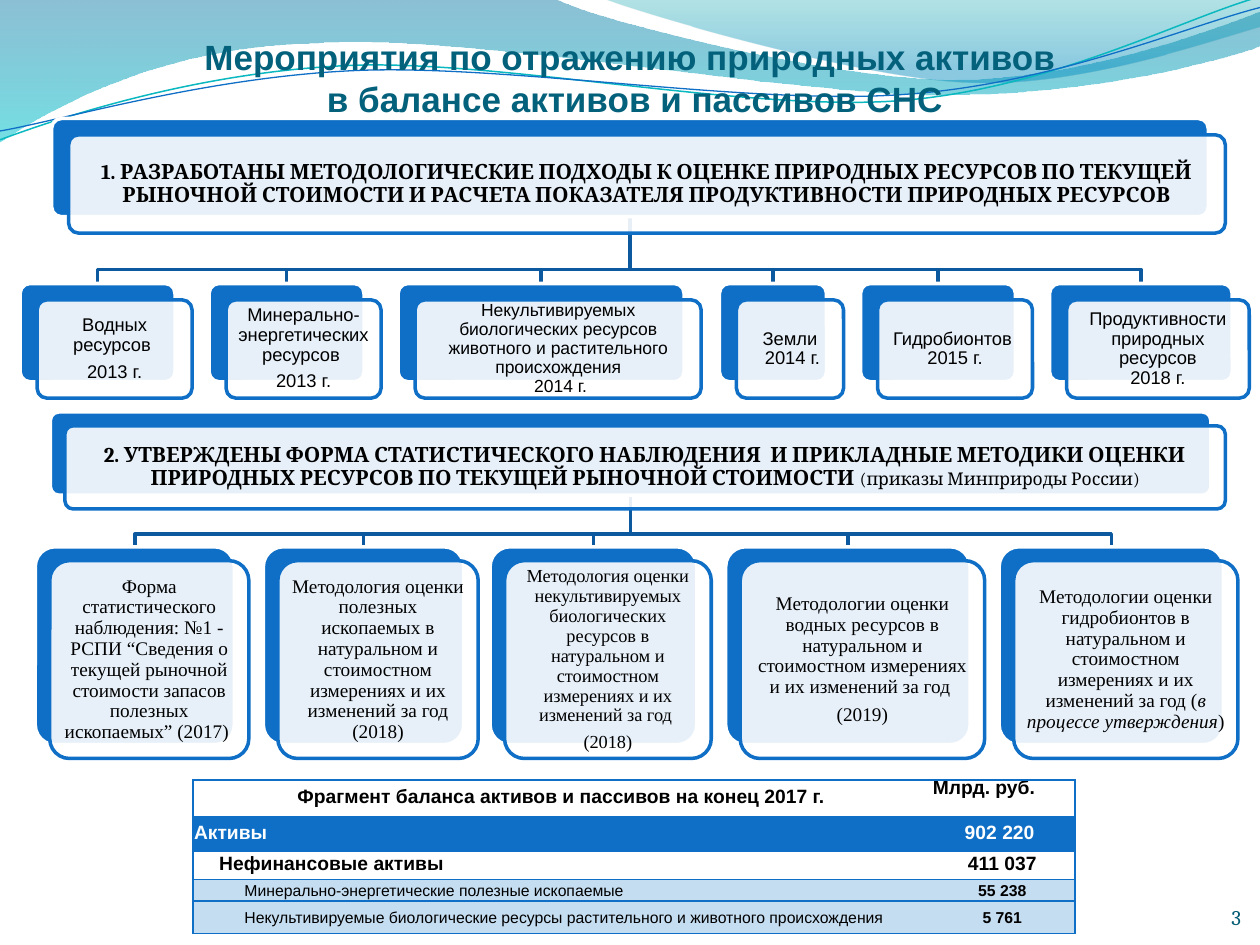
from copy import deepcopy
from math import cos, radians, sin

from lxml.etree import Element, SubElement
from pptx import Presentation
from pptx.dml.color import RGBColor
from pptx.enum.shapes import MSO_SHAPE as Shape
from pptx.enum.text import MSO_ANCHOR as Anchor, PP_ALIGN as Align
from pptx.oxml.ns import qn
from pptx.util import Inches, Pt

THEME = {
    "blue": "0F6FC6", "branch": "0C599F", "pale": "C5DDF1", "white": "FFFFFF", "black": "000000",
    "title": "04617B", "number": "045D75", "teal": "0AB8BF",
    "sans": "Arial", "serif": "Cambria", "roman": "Times New Roman",
    "title_size": 20, "heading_size": 12, "table_size": 11, "detail_size": 9,
}
NO_TABLE_STYLE = "{2D5ABB26-0587-4C30-8999-92F81FD0307C}"
CORNER = 0.1
WAVE_TILT = 357.3

TITLE = "Мероприятия по отражению природных активов \nв балансе активов и пассивов СНС"
PAGE_NUMBER = "3"

# Each curve: start point, then cubic segments (three points) or straight ones (one point).
BANDS = [
    {"start": (0, 0),
     "segments": [[(4.4, -0.01)], [(4.76, 0.17), (6.64, 0.63), (7.58, 0.63)],
                  [(8.53, 0.63), (9.58, 0.26), (10, 0.09)], [(10.01, 0.36)],
                  [(9.83, 0.44), (8.7, 0.76), (7.46, 0.75)], [(6.22, 0.75), (3.82, 0.28), (2.57, 0.34)],
                  [(1.29, 0.36), (0.46, 0.83), (-0.01, 1.13)]],
     "stops": [(0, "0074A1", 45), (1, "00C6CF", 55)]},
    {"start": (4.79, -0.01),
     "segments": [[(5.09, 0.11), (6.82, 0.62), (7.69, 0.65)], [(8.56, 0.69), (9.61, 0.32), (10, 0.21)],
                  [(10, 0)]],
     "stops": [(0, "00A1A9", 30), (0.8, "008BBF", 45)]},
]
WAVES = [
    {"start": (0, 1.11), "color": "teal", "width": 0.85, "center": (4.99, 0.57),
     "segments": [[(0.48, 0.93), (1.58, 0.57), (2.77, 0.52)], [(3.95, 0.47), (5.93, 0.89), (7.13, 0.8)],
                  [(8.33, 0.71), (9.38, 0.15), (9.98, -0.02)]]},
    {"start": (0, 1.04), "color": "blue", "width": 0.75, "center": (5, 0.59),
     "segments": [[(0.47, 0.96), (1.64, 0.61), (2.83, 0.56)], [(4.03, 0.51), (5.97, 0.84), (7.17, 0.75)],
                  [(8.36, 0.67), (9.41, 0.21), (10, 0.06)]]},
]

# Paragraphs are lists of (text, format overrides) runs.
METHODS = {
    "head": (0.41, 0.94, 9.18, 0.78), "gap": 0.27, "rise": 0.13, "drop": 0.11,
    "top": 2.25, "height": 0.78, "font": THEME["sans"],
    "heading": [[("1. РАЗРАБОТАНЫ МЕТОДОЛОГИЧЕСКИЕ ПОДХОДЫ К ОЦЕНКЕ ПРИРОДНЫХ РЕСУРСОВ ПО ТЕКУЩЕЙ "
                  "РЫНОЧНОЙ СТОИМОСТИ И РАСЧЕТА ПОКАЗАТЕЛЯ ПРОДУКТИВНОСТИ ПРИРОДНЫХ РЕСУРСОВ", {})]],
    "items": [  # left, width, type size, paragraphs
        (0.16, 1.23, 10.5, [[("Водных ресурсов ", {})], [("2013 г.", {})]]),
        (1.66, 1.23, 10.5, [[("Минерально-энергетических ресурсов ", {})], [("2013 г.", {})]]),
        (3.16, 2.27, 10, [[("Некультивируемых биологических ресурсов животного и растительного "
                            "происхождения\n 2014 г.", {})]]),
        (5.71, 0.85, 10.5, [[("Земли\n 2014 г.", {})]]),
        (6.83, 1.23, 10.5, [[("Гидробионтов \n2015 г.", {})]]),
        (8.33, 1.45, 10.5, [[("Продуктивности природных ресурсов\n2018 г.", {})]]),
    ],
}
APPROVED = {
    "head": (0.4, 3.27, 9.21, 0.66), "gap": 0.23, "rise": 0.11, "drop": 0.1,
    "top": 4.34, "height": 1.57, "font": THEME["roman"],
    "heading": [[("2. УТВЕРЖДЕНЫ ФОРМА СТАТИСТИЧЕСКОГО НАБЛЮДЕНИЯ  И ПРИКЛАДНЫЕ МЕТОДИКИ ОЦЕНКИ "
                  "ПРИРОДНЫХ РЕСУРСОВ ПО ТЕКУЩЕЙ РЫНОЧНОЙ СТОИМОСТИ ", {}),
                 ("(приказы Минприроды России)", {"size": Pt(10), "bold": False})]],
    "items": [
        (0.28, 1.58, 11, [[("Форма статистического наблюдения: №1 - РСПИ “Сведения о текущей рыночной "
                            "стоимости запасов полезных ископаемых” (2017) ", {})]]),
        (2.09, 1.59, 11, [[("Методология оценки полезных ископаемых в натуральном и стоимостном "
                            "измерениях и их изменений за год (2018)", {})]]),
        (3.89, 1.64, 10.5, [[("Методология оценки некультивируемых биологических ресурсов в натуральном "
                              "и стоимостном измерениях и их изменений за год ", {})], [("(2018)", {})]]),
        (5.76, 1.94, 11, [[("Методологии оценки водных ресурсов в натуральном и стоимостном измерениях "
                            "и их изменений за год ", {})], [("(2019)", {})]]),
        (7.93, 1.78, 11, [[("Методологии оценки гидробионтов в натуральном и стоимостном измерениях и "
                            "их изменений за год (", {}), ("в процессе утверждения", {"italic": True}),
                           (")", {})]]),
    ],
}

BALANCE_PLACE = (1.53, 6.19, 7, 1.23)
BALANCE_COLUMNS = (5.85, 1.15)
BALANCE = [  # label, value, row height, indent, fill, text colour, type size, bold label
    ("Фрагмент баланса активов и пассивов на конец 2017 г.", "Млрд. руб.", 0.29, 0, "white", "black", "table_size", True),
    ("Активы", "902 220 ", 0.28, 0, "blue", "white", "table_size", True),
    ("Нефинансовые активы", "411 037", 0.22, 0.2, "white", "black", "table_size", True),
    ("Минерально-энергетические полезные ископаемые", "55 238", 0.17, 0.4, "pale", "black", "detail_size", False),
    ("Некультивируемые биологические ресурсы растительного и животного происхождения", "5 761",
     0.26, 0.4, "pale", "black", "detail_size", False),
]


def rgb(name):
    return RGBColor.from_string(THEME.get(name, name))


def font_format(font, size, color="black", bold=False):
    return {"name": font, "size": Pt(size), "bold": bold, "color": color}


def set_alpha(color_element, percent):
    SubElement(color_element, qn("a:alpha")).set("val", str(percent * 1000))


def write(frame, paragraphs, base, align=Align.CENTER, anchor=Anchor.MIDDLE, margins=(0, 0, 0, 0), **spacing):
    """Fill a text frame; a newline inside a run becomes a line break of the same size."""
    frame.word_wrap, frame.vertical_anchor = True, anchor
    for side, margin in zip(("left", "top", "right", "bottom"), margins):
        setattr(frame, f"margin_{side}", Inches(margin))
    for index, runs in enumerate(paragraphs):
        para = frame.add_paragraph() if index else frame.paragraphs[0]
        para.alignment = align
        for name, value in spacing.items():
            setattr(para, name, value)
        for text, changes in runs:
            for number, line in enumerate(text.split("\n")):
                if number:
                    para.add_line_break()
                    para._p[-1].append(deepcopy(span._r.rPr))
                span = para.add_run()
                span.text = line
                for name, value in {**base, **changes}.items():
                    if name == "color":
                        span.font.color.rgb = rgb(value)
                    else:
                        setattr(span.font, name, value)


def add_text(page, place, paragraphs, base, **layout):
    box = page.shapes.add_textbox(*map(Inches, place))
    write(box.text_frame, paragraphs, base, **layout)


def add_path(page, start, segments, close=False):
    """Draw a freeform; segments of three points become cubic curves."""
    knots = [(Inches(x), Inches(y)) for x, y in [start] + [segment[-1] for segment in segments]]
    builder = page.shapes.build_freeform(*knots[0])
    builder.add_line_segments(knots[1:], close=close)
    shape = builder.convert_to_shape()
    shape.shadow.inherit = False
    for step, segment in zip(list(shape.element.iter(qn("a:lnTo"))), segments):
        if len(segment) == 3:
            curve = Element(qn("a:cubicBezTo"))
            for x, y in segment:
                SubElement(curve, qn("a:pt"), x=str(Inches(x) - shape.left), y=str(Inches(y) - shape.top))
            step.getparent().replace(step, curve)
    return shape


def add_line(page, start, segments, color, width):
    line = add_path(page, start, segments)
    line.fill.background()
    line.line.color.rgb, line.line.width = rgb(color), Pt(width)
    return line


def add_wave(page, wave):
    """Lay the curve level around its center, then tilt the whole shape."""
    angle = radians(360 - WAVE_TILT)
    middle_x, middle_y = wave["center"]

    def level(point):
        x, y = point[0] - middle_x, point[1] - middle_y
        return middle_x + x * cos(angle) - y * sin(angle), middle_y + x * sin(angle) + y * cos(angle)

    segments = [[level(point) for point in segment] for segment in wave["segments"]]
    add_line(page, level(wave["start"]), segments, wave["color"], wave["width"]).rotation = WAVE_TILT


def add_band(page, band):
    shape = add_path(page, band["start"], band["segments"], close=True)
    shape.line.fill.background()
    shape.fill.gradient()
    shape.fill.gradient_angle = 270
    for stop, (position, color, _) in zip(shape.fill.gradient_stops, band["stops"]):
        stop.position, stop.color.rgb = position, rgb(color)
    colors = list(shape.element.spPr.find(qn("a:gradFill")).iter(qn("a:srgbClr")))
    for element, (_, _, alpha) in zip(colors, band["stops"]):
        set_alpha(element, alpha)


def add_card(page, place, shift, paragraphs, base):
    """Add a blue plate, a translucent white card in front of it, and the text."""
    left, top, width, height = place
    front = left + shift[0], top + shift[1]
    for x, y, fill, line in ((left, top, "blue", "white"), (*front, "white", "blue")):
        card = page.shapes.add_shape(Shape.ROUNDED_RECTANGLE, *map(Inches, (x, y, width, height)))
        card.adjustments[0] = CORNER
        card.shadow.inherit = False
        card.fill.solid()
        card.fill.fore_color.rgb = rgb(fill)
        card.line.color.rgb, card.line.width = rgb(line), Pt(2)
    set_alpha(card.element.spPr.find(qn("a:solidFill"))[0], 90)
    inset = CORNER * min(width, height) * (1 - cos(radians(45)))
    add_text(page, (front[0] + inset, front[1] + inset, width - 2 * inset, height - 2 * inset), paragraphs, base,
             margins=(0.05,) * 4, line_spacing=0.9, space_after=Pt(base["size"].pt * 0.35))


def add_tree(page, tree):
    x, y, width, height = tree["head"]
    top, shift = tree["top"], (tree["gap"] / 2, tree["rise"])
    trunk, bend = x + width / 2, top - tree["drop"]
    for left, item_width, _, _ in reversed(tree["items"]):
        middle = left + item_width / 2
        add_line(page, (trunk, y + height), [[(trunk, bend)], [(middle, bend)], [(middle, top)]], "branch", 2)
    add_card(page, tree["head"], shift, tree["heading"],
             font_format(THEME["serif"], THEME["heading_size"], bold=True))
    for left, item_width, size, paragraphs in tree["items"]:
        add_card(page, (left, top, item_width, tree["height"]), shift, paragraphs, font_format(tree["font"], size))


def add_borders(cell, sides):
    for index, side in enumerate(sides):
        line = SubElement(cell._tc.get_or_add_tcPr(), qn(f"a:ln{side}"), w=str(Pt(1)))
        SubElement(SubElement(line, qn("a:solidFill")), qn("a:srgbClr")).set("val", THEME["blue"])
        cell._tc.tcPr.insert(index, line)


def add_balance(page):
    table = page.shapes.add_table(len(BALANCE), 2, *map(Inches, BALANCE_PLACE)).table
    table.first_row = table.horz_banding = False
    table._tbl.tblPr.find(qn("a:tableStyleId")).text = NO_TABLE_STYLE
    for column, width in zip(table.columns, BALANCE_COLUMNS):
        column.width = Inches(width)
    for row, (label, value, height, indent, fill, color, size, bold) in enumerate(BALANCE):
        table.rows[row].height = Inches(height)
        for column, text in enumerate((label, value)):
            cell = table.cell(row, column)
            unit = row == 0 and column == 1
            margins = (0.01 + (0 if column else indent), 0.01, 0.3 if unit else 0.01, 0)
            write(cell.text_frame, [[(text, {})]],
                  font_format(THEME["sans"], THEME[size], color, bold or column == 1),
                  align=Align.CENTER if column or row == 0 else Align.LEFT, line_spacing=Pt(10))
            cell.vertical_anchor = Anchor.TOP if unit else Anchor.MIDDLE
            cell.margin_left, cell.margin_top, cell.margin_right, cell.margin_bottom = map(Inches, margins)
            cell.fill.solid()
            cell.fill.fore_color.rgb = rgb(fill)
            add_borders(cell, ["R" if column else "L"] + ["T"] * (row == 0) + ["B"] * (row >= 2))


def main():
    deck = Presentation()
    deck.slide_width, deck.slide_height = Inches(10), Inches(7.5)
    page = deck.slides.add_slide(deck.slide_layouts[6])
    for band in BANDS:
        add_band(page, band)
    for wave in WAVES:
        add_wave(page, wave)
    add_text(page, (0.16, 0, 9.76, 0.95), [[(TITLE, {})]],
             font_format(THEME["sans"], THEME["title_size"], "title", True),
             anchor=Anchor.BOTTOM, margins=(0, 0.05, 0, 0))
    add_tree(page, METHODS)
    add_balance(page)
    add_tree(page, APPROVED)
    add_text(page, (9.02, 6.98, 0.83, 0.4), [[(PAGE_NUMBER, {})]],
             font_format(THEME["serif"], THEME["heading_size"], "number"), align=Align.RIGHT, anchor=Anchor.BOTTOM)
    deck.save("out.pptx")


if __name__ == "__main__":
    main()
